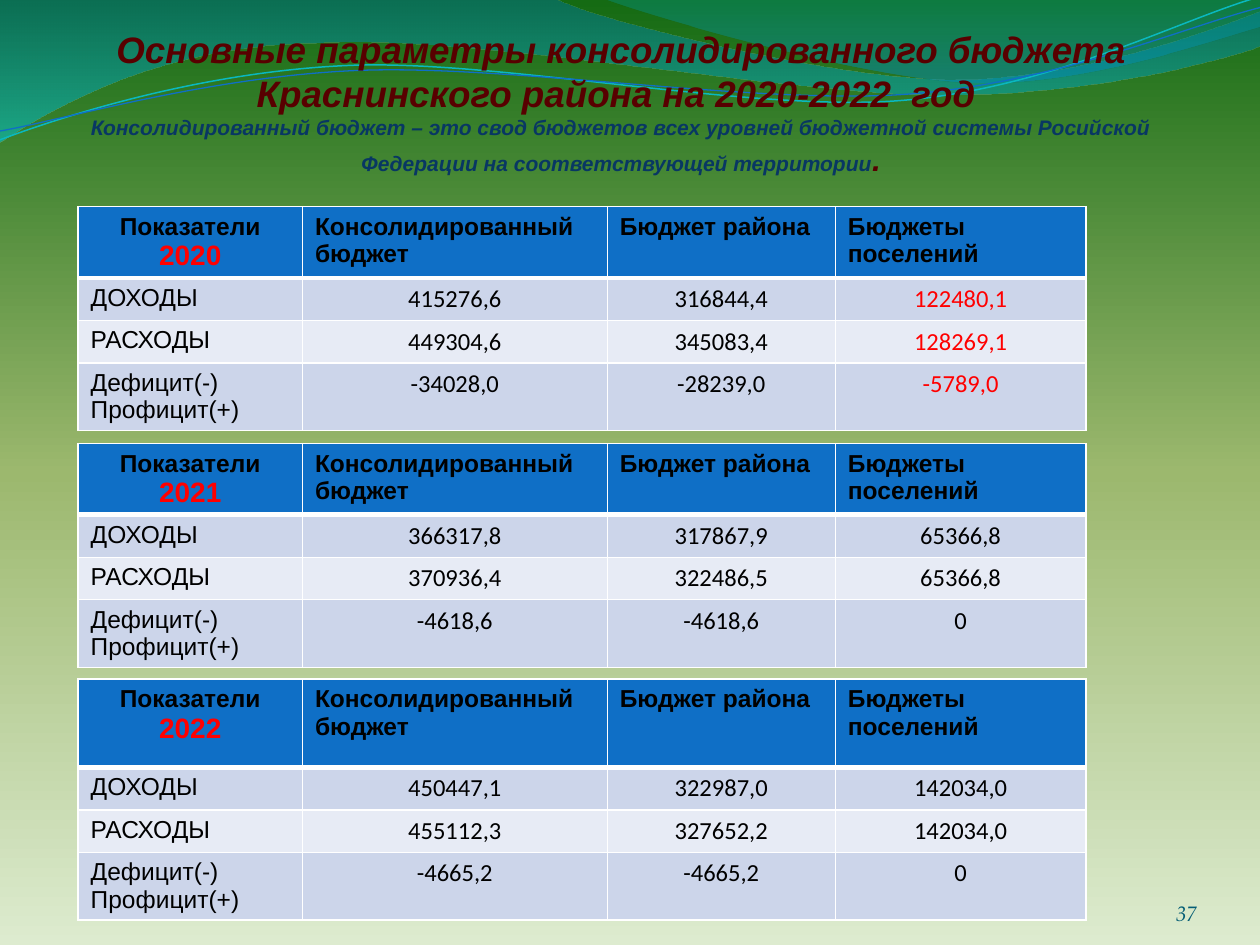
"""Build the slide on the consolidated district budget for 2020-2022."""
from itertools import product

from lxml.etree import SubElement
from pptx import Presentation
from pptx.dml.color import RGBColor
from pptx.enum.text import MSO_ANCHOR, MSO_AUTO_SIZE, PP_ALIGN
from pptx.oxml import parse_xml
from pptx.oxml.ns import nsdecls, qn
from pptx.util import Inches, Pt

THEME = {
    "head": "0F6FC6", "band": ("CCD5EA", "E7EBF5"), "border": "FFFFFF",
    "ink": "000000", "accent": "FF0000", "title": "580000",
    "note": "083763", "number": "045D75",
    "title_size": 21, "note_size": 12, "dot_size": 18,
    "cell_size": 14, "year_size": 16, "number_size": 12,
    "font": "Arial", "value_font": "Calibri", "number_font": "TeX Gyre Pagella",
}
BACKGROUND = [(0, "DDEBCF", 100), (50, "9CB86E", 100), (100, "156B13", 100)]

TITLE = [
    "Основные параметры консолидированного бюджета",
    "Краснинского района на 2020-2022  год ",
]
NOTE = ("Консолидированный бюджет – это свод бюджетов всех уровней бюджетной "
        "системы Росийской Федерации на соответствующей территории")
HEADERS = ["Консолидированный бюджет", "Бюджет района", "Бюджеты поселений"]
LABELS = ["ДОХОДЫ", "РАСХОДЫ", "Дефицит(-)\nПрофицит(+)"]
BUDGETS = [
    {"year": "2020", "top": 1.64, "height": 1.83, "head": 0.37, "red_column": 3, "values": [
        ("415276,6", "316844,4", "122480,1"),
        ("449304,6", "345083,4", "128269,1"),
        ("-34028,0", "-28239,0", "-5789,0")]},
    {"year": "2021", "top": 3.52, "height": 1.83, "head": 0.37, "red_column": None, "values": [
        ("366317,8", "317867,9", "65366,8"),
        ("370936,4", "322486,5", "65366,8"),
        ("-4618,6", "-4618,6", "0")]},
    {"year": "2022", "top": 5.39, "height": 1.94, "head": 0.7, "red_column": None, "values": [
        ("450447,1", "322987,0", "142034,0"),
        ("455112,3", "327652,2", "142034,0"),
        ("-4665,2", "-4665,2", "0")]},
]
LEFT = 0.62
COLUMNS = [1.78, 2.42, 1.81, 1.99]
BODY_ROWS = [0.25, 0.25, 0.4]

BANDS = [
    {"path": [(0, -0.01), (4.4, -0.01),
              (4.76, 0.17, 6.64, 0.63, 7.58, 0.63), (8.53, 0.63, 9.58, 0.26, 10, 0.09),
              (10.01, 0.36),
              (9.83, 0.44, 8.7, 0.76, 7.46, 0.75), (6.22, 0.75, 3.82, 0.28, 2.57, 0.34),
              (1.29, 0.35, 0.46, 0.83, -0.01, 1.13), (0, -0.01)],
     "stops": [(0, "0074A1", 45), (100, "00C6CF", 55)]},
    {"path": [(4.79, -0.01),
              (5.09, 0.11, 6.82, 0.62, 7.69, 0.65), (8.56, 0.69, 9.61, 0.32, 10, 0.21),
              (10, 0), (4.79, -0.01)],
     "stops": [(0, "00A1A9", 30), (80, "008BBF", 45)]},
]
WAVES = [
    {"path": [(0, 1.11),
              (0.48, 0.93, 1.58, 0.57, 2.77, 0.52), (3.95, 0.47, 5.93, 0.89, 7.13, 0.8),
              (8.33, 0.71, 9.38, 0.15, 9.98, -0.02)],
     "color": "0AB8BF", "width": 0.85},
    {"path": [(0, 1.04),
              (0.47, 0.96, 1.64, 0.61, 2.83, 0.56), (4.03, 0.51, 5.97, 0.83, 7.17, 0.75),
              (8.36, 0.67, 9.41, 0.21, 10, 0.06)],
     "color": "0F6FC6", "width": 0.75},
]


def set_gradient(fill, owner, stops, angle):
    """Give a fill the listed (position, colour, opacity) stops."""
    fill.gradient()
    grad = owner.xpath(".//a:gradFill")[0]
    marks = "".join(
        f'<a:gs pos="{pos * 1000}"><a:srgbClr val="{color}">'
        f'<a:alpha val="{alpha * 1000}"/></a:srgbClr></a:gs>'
        for pos, color, alpha in stops)
    grad.getparent().replace(grad, parse_xml(
        f'<a:gradFill {nsdecls("a")} rotWithShape="1"><a:gsLst>{marks}</a:gsLst>'
        f'<a:lin ang="{angle * 60000}" scaled="0"/></a:gradFill>'))


def add_outline(s, segments, close):
    """Draw line segments and cubic curves as one freeform."""
    points = [(Inches(seg[i]), Inches(seg[i + 1]))
              for seg in segments for i in range(0, len(seg), 2)]
    builder = s.shapes.build_freeform(*points[0])
    builder.add_line_segments(points[1:], close=close)
    sp = builder.convert_to_shape()
    sp.shadow.inherit = False
    steps = iter(sp.element.xpath(".//a:lnTo"))
    for seg in segments[1:]:
        lines = [next(steps) for _ in range(len(seg) // 2)]
        if len(lines) == 3:
            curve = parse_xml(f'<a:cubicBezTo {nsdecls("a")}/>')
            lines[0].addprevious(curve)
            for line in lines:
                curve.append(line[0])
                line.getparent().remove(line)
    return sp


def style(r, size, color, font=THEME["font"], bold=False, italic=False):
    """Format one run."""
    r.font.size, r.font.name = Pt(size), font
    r.font.bold, r.font.italic = bold, italic
    r.font.color.rgb = RGBColor.from_string(color)


def set_frame(tf, top=0):
    """Wrap text, anchor it at the bottom and set the insets."""
    tf.word_wrap, tf.auto_size = True, MSO_AUTO_SIZE.NONE
    tf.vertical_anchor = MSO_ANCHOR.BOTTOM
    tf.margin_left = tf.margin_right = tf.margin_bottom = 0
    tf.margin_top = Inches(top)


def add_title(s):
    """Fill the title placeholder and bring it above the waves."""
    sp = s.shapes.title
    sp.left, sp.top, sp.width, sp.height = map(Inches, (LEFT, 0, 8.62, 1.41))
    sp.element.getparent().append(sp.element)
    tf = sp.text_frame
    tf.text = "\n".join(TITLE + [NOTE])
    set_frame(tf, 0.05)
    for p in tf.paragraphs:
        p.alignment = PP_ALIGN.CENTER
        style(p.runs[0], THEME["title_size"], THEME["title"], bold=True, italic=True)
    style(p.runs[0], THEME["note_size"], THEME["note"], bold=True, italic=True)
    r = p.add_run()
    r.text = "."
    style(r, THEME["dot_size"], THEME["title"], bold=True, italic=True)


def set_borders(cell, bottom):
    """Draw the cell's white edges with the given bottom width."""
    props = cell._tc.get_or_add_tcPr()
    for i, (side, width) in enumerate((("L", 1), ("R", 1), ("T", 1), ("B", bottom))):
        ln = SubElement(props, qn(f"a:ln{side}"), w=str(Pt(width)))
        solid = SubElement(ln, qn("a:solidFill"))
        SubElement(solid, qn("a:srgbClr"), val=THEME["border"])
        props.insert(i, ln)


def add_budget(s, budget):
    """Add the table of one year."""
    heights = [budget["head"]] + BODY_ROWS
    grid = [[f"Показатели\n{budget['year']}"] + HEADERS]
    grid += [[label, *row] for label, row in zip(LABELS, budget["values"])]
    frame = s.shapes.add_table(
        len(heights), len(COLUMNS), Inches(LEFT), Inches(budget["top"]),
        Inches(sum(COLUMNS)), Inches(budget["height"]))
    tbl = frame.table
    for col, width in zip(tbl.columns, COLUMNS):
        col.width = Inches(width)
    for row, height in zip(tbl.rows, heights):
        row.height = Inches(height)
    frame.height = Inches(budget["height"])
    for i, j in product(range(len(heights)), range(len(COLUMNS))):
        cell, head, value = tbl.cell(i, j), i == 0, i > 0 and j > 0
        cell.text_frame.text = grid[i][j]
        cell.fill.solid()
        cell.fill.fore_color.rgb = RGBColor.from_string(
            THEME["head"] if head else THEME["band"][(i - 1) % 2])
        set_borders(cell, 3 if head else 1)
        color = THEME["accent" if value and j == budget["red_column"] else "ink"]
        font = THEME["value_font" if value else "font"]
        for p in cell.text_frame.paragraphs:
            p.alignment = PP_ALIGN.CENTER if value or i == j == 0 else PP_ALIGN.LEFT
            style(p.runs[0], THEME["cell_size"], color, font, bold=head)
        if i == j == 0:
            style(p.runs[0], THEME["year_size"], THEME["accent"], bold=True)


def main():
    """Assemble and save the slide."""
    prs = Presentation()
    prs.slide_width, prs.slide_height = Inches(10), Inches(7.5)
    s = prs.slides.add_slide(prs.slide_layouts[5])
    set_gradient(s.background.fill, s.element, BACKGROUND, 270)
    for band in BANDS:
        sp = add_outline(s, band["path"], True)
        set_gradient(sp.fill, sp.element, band["stops"], 90)
        sp.line.fill.background()
    for wave in WAVES:
        sp = add_outline(s, wave["path"], False)
        sp.fill.background()
        sp.line.color.rgb = RGBColor.from_string(wave["color"])
        sp.line.width = Pt(wave["width"])
    add_title(s)
    for budget in BUDGETS:
        add_budget(s, budget)
    sp = s.shapes.add_textbox(*map(Inches, (8.67, 6.95, 0.83, 0.4)))
    set_frame(sp.text_frame)
    sp.text_frame.text = "37"
    p = sp.text_frame.paragraphs[0]
    p.alignment = PP_ALIGN.RIGHT
    style(p.runs[0], THEME["number_size"], THEME["number"], THEME["number_font"], italic=True)
    prs.save("out.pptx")


if __name__ == "__main__":
    main()
